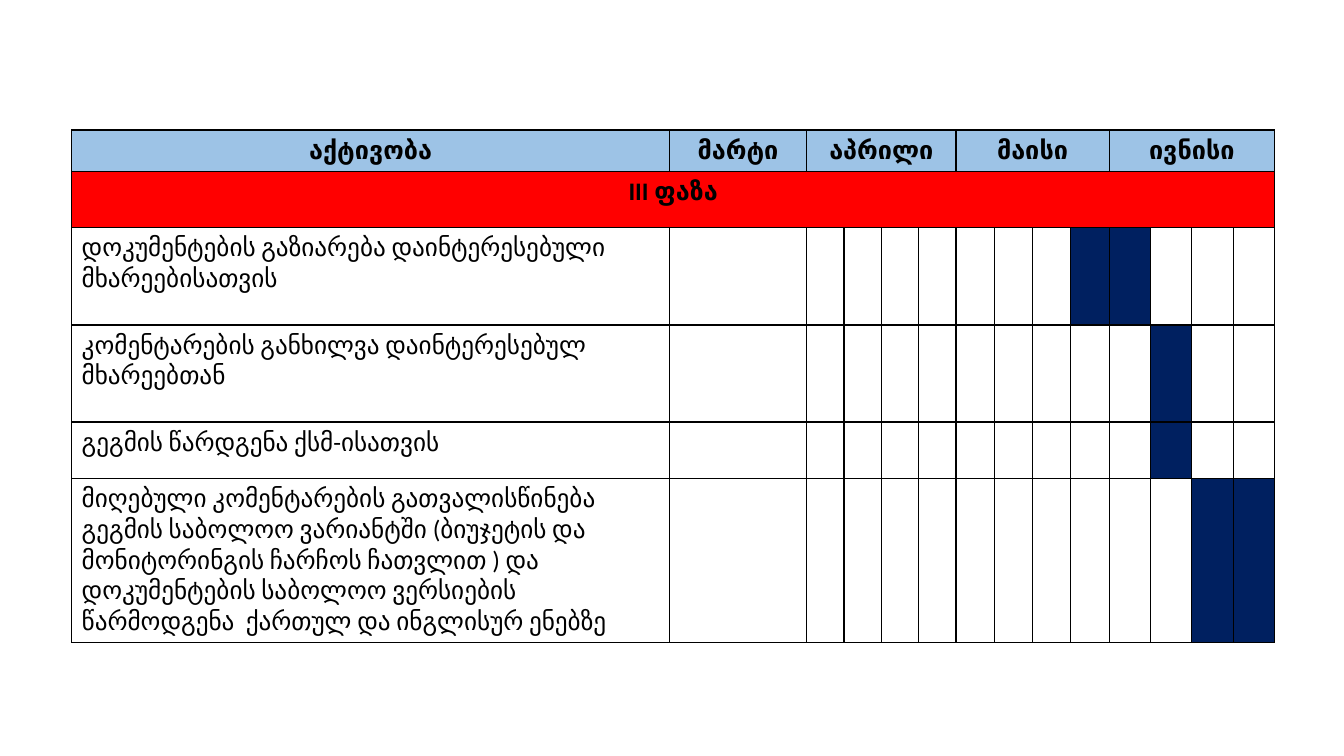
"""Build a slide with the phase III activity schedule from March to June."""
from dataclasses import dataclass
from itertools import accumulate

from lxml import etree
from pptx import Presentation
from pptx import util as u
from pptx.dml.color import RGBColor
from pptx.enum import text
from pptx.oxml import ns
from pptx.table import Table, _Cell

BLACK = RGBColor(0x00, 0x00, 0x00)
HEADER_BLUE = RGBColor(0x9D, 0xC3, 0xE6)
PHASE_RED = RGBColor(0xFF, 0x00, 0x00)
WEEK_NAVY = RGBColor(0x00, 0x20, 0x60)

SLIDE_WIDTH, SLIDE_HEIGHT = u.Inches(13.33), u.Inches(7.5)
LEFT, TOP = 5.33, 17.2
HEADER_HEIGHT, PHASE_HEIGHT = 5.47, 7.47
FONT = {"name": "Calibri", "size": u.Pt(18)}


@dataclass(frozen=True)
class Period:
    """A header cell over equal columns, each a percentage of the slide's width."""

    title: str
    column_width: float
    columns: int = 1


@dataclass(frozen=True)
class Activity:
    """A schedule row, a percentage of the slide's height, with its busy columns."""

    title: str
    height: float
    busy: tuple[int, ...]


PERIODS = [
    Period("აქტივობა", 44.49),
    Period("მარტი", 10.2),
    Period("აპრილი", 2.78, 4),
    Period("მაისი", 2.85, 4),
    Period("ივნისი", 3.08, 4),
]
PHASE = "III ფაზა"
ACTIVITIES = [
    Activity("დოკუმენტების გაზიარება დაინტერესებული მხარეებისათვის", 12.85, (9, 10)),
    Activity("კომენტარების განხილვა დაინტერესებულ მხარეებთან", 12.85, (11,)),
    Activity("გეგმის წარდგენა ქსმ-ისათვის", 7.47, (11,)),
    Activity(
        "მიღებული კომენტარების გათვალისწინება გეგმის საბოლოო ვარიანტში "
        "(ბიუჯეტის და მონიტორინგის ჩარჩოს ჩათვლით ) და დოკუმენტების საბოლოო "
        "ვერსიების წარმოდგენა  ქართულ და ინგლისურ ენებზე",
        21.73,
        (12, 13),
    ),
]


def across(percent: float) -> int:
    """Turn a percentage of the slide's width into a length."""
    return round(SLIDE_WIDTH * percent / 100)


def down(percent: float) -> int:
    """Turn a percentage of the slide's height into a length."""
    return round(SLIDE_HEIGHT * percent / 100)


def paint(cell: _Cell, color: RGBColor) -> None:
    """Fill a cell with one colour."""
    cell.fill.solid()
    cell.fill.fore_color.rgb = color


def write(cell: _Cell, words: str, bold: bool, align: text.PP_ALIGN) -> None:
    """Put one formatted paragraph into a cell."""
    para = cell.text_frame.paragraphs[0]
    para.alignment = align
    span = para.add_run()
    span.text = words
    for name, value in {**FONT, "bold": bold}.items():
        setattr(span.font, name, value)
    span.font.color.rgb = BLACK


def outline(cell: _Cell) -> None:
    """Draw a thin black border on all four sides of a cell."""
    properties = cell._tc.get_or_add_tcPr()
    for index, side in enumerate(("lnL", "lnR", "lnT", "lnB")):
        line = etree.Element(ns.qn(f"a:{side}"), w=str(u.Pt(1)))
        fill = etree.SubElement(line, ns.qn("a:solidFill"))
        etree.SubElement(fill, ns.qn("a:srgbClr"), val=str(BLACK))
        properties.insert(index, line)


def add_band(table: Table, row: int, start: int, columns: int, words: str, color: RGBColor) -> None:
    """Merge a run of cells into one coloured, centred heading."""
    cell = table.cell(row, start)
    if columns > 1:
        cell.merge(table.cell(row, start + columns - 1))
    paint(cell, color)
    write(cell, words, True, text.PP_ALIGN.CENTER)


def add_activity(table: Table, row: int, activity: Activity) -> None:
    """Name an activity and colour its busy columns."""
    write(table.cell(row, 0), activity.title, False, text.PP_ALIGN.LEFT)
    for column in activity.busy:
        paint(table.cell(row, column), WEEK_NAVY)


def main() -> None:
    """Create the schedule slide and save it."""
    deck = Presentation()
    deck.slide_width, deck.slide_height = SLIDE_WIDTH, SLIDE_HEIGHT
    page = deck.slides.add_slide(deck.slide_layouts[6])

    widths = [period.column_width for period in PERIODS for _ in range(period.columns)]
    heights = [HEADER_HEIGHT, PHASE_HEIGHT, *(activity.height for activity in ACTIVITIES)]
    table = page.shapes.add_table(
        len(heights), len(widths),
        across(LEFT), down(TOP), across(sum(widths)), down(sum(heights)),
    ).table
    for flag in ("first_row", "horz_banding"):
        setattr(table, flag, False)
    for column, width in zip(table.columns, widths):
        column.width = across(width)
    for row, height in zip(table.rows, heights):
        row.height = down(height)
    for cell in table.iter_cells():
        cell.fill.background()
        outline(cell)

    starts = accumulate((period.columns for period in PERIODS), initial=0)
    for start, period in zip(starts, PERIODS):
        add_band(table, 0, start, period.columns, period.title, HEADER_BLUE)
    add_band(table, 1, 0, len(widths), PHASE, PHASE_RED)
    for row, activity in enumerate(ACTIVITIES, start=2):
        add_activity(table, row, activity)

    deck.save("out.pptx")


if __name__ == "__main__":
    main()
